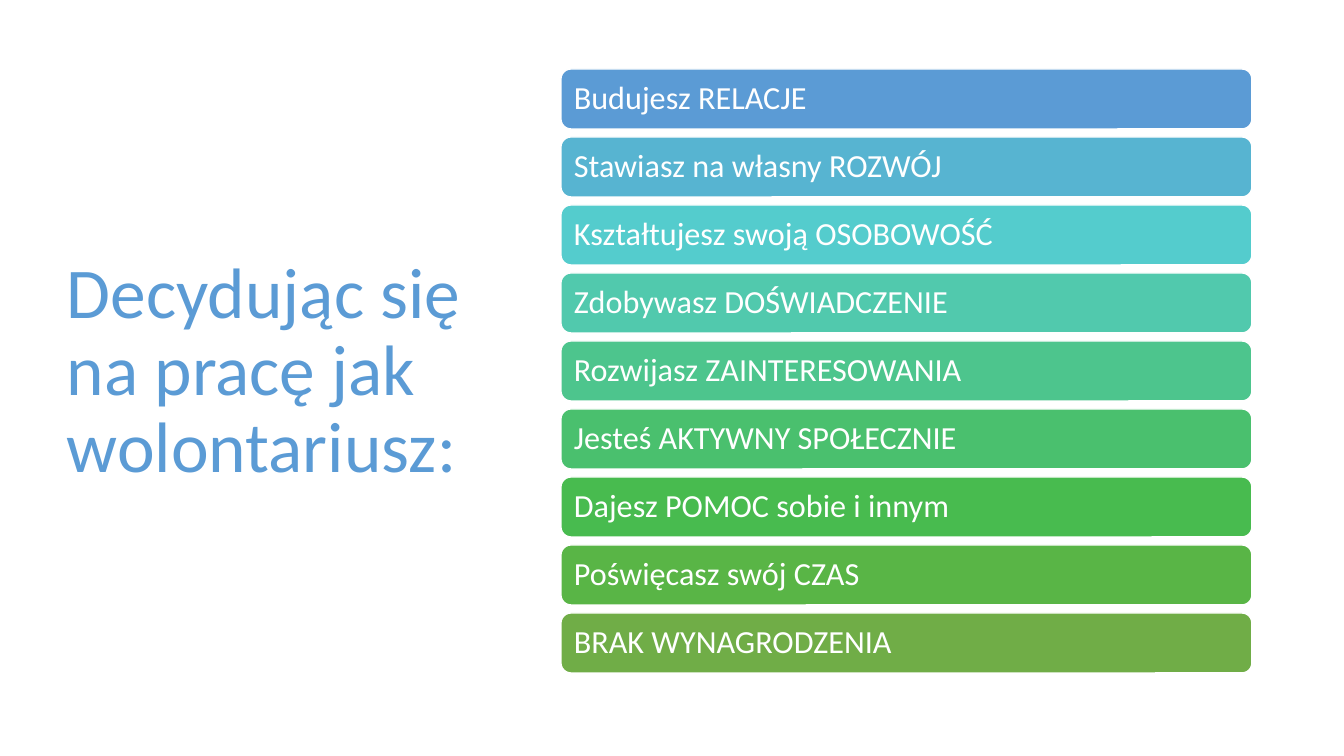
from dataclasses import dataclass

from pptx import Presentation
from pptx.dml.color import RGBColor
from pptx.enum.shapes import MSO_SHAPE
from pptx.enum.text import MSO_ANCHOR, PP_ALIGN
from pptx.util import Emu, Pt

ROUND_RECT = MSO_SHAPE.ROUNDED_RECTANGLE
MIDDLE = MSO_ANCHOR.MIDDLE
LEFT = PP_ALIGN.LEFT

PX_PER_INCH = 100.8
FONT = "Calibri"
COLORS = {
    "white": "FFFFFF",
    "blue": "5B9BD5",
    "sky": "57B4D1",
    "turquoise": "54CCCD",
    "teal": "51C9AD",
    "mint": "4DC58D",
    "emerald": "4AC06E",
    "green": "48BB4F",
    "leaf": "59B546",
    "olive": "70AD47",
}
INSET = 10
BAR_LEFT, BAR_TOP, BAR_WIDTH, BAR_HEIGHT, BAR_PITCH = 561, 69, 691, 60, 68


@dataclass(frozen=True)
class Benefit:
    text: str
    color: str


TITLE = "Decydując się na pracę jak wolontariusz:"
BENEFITS = [
    Benefit("Budujesz RELACJE", "blue"),
    Benefit("Stawiasz na własny ROZWÓJ", "sky"),
    Benefit("Kształtujesz swoją OSOBOWOŚĆ", "turquoise"),
    Benefit("Zdobywasz DOŚWIADCZENIE", "teal"),
    Benefit("Rozwijasz ZAINTERESOWANIA", "mint"),
    Benefit("Jesteś AKTYWNY SPOŁECZNIE", "emerald"),
    Benefit("Dajesz POMOC sobie i innym", "green"),
    Benefit("Poświęcasz swój CZAS", "leaf"),
    Benefit("BRAK WYNAGRODZENIA", "olive"),
]


def px(n: int) -> Emu:
    return Emu(round(n * 914400 / PX_PER_INCH))


def rgb(name: str) -> RGBColor:
    return RGBColor.from_string(COLORS[name])


def set_text(sp, text: str, size: int, color: str) -> None:
    tf = sp.text_frame
    tf.word_wrap = True
    tf.vertical_anchor = MIDDLE
    tf.margin_left = tf.margin_right = px(INSET)
    tf.margin_top = tf.margin_bottom = px(INSET // 2)
    p = tf.paragraphs[0]
    p.alignment = LEFT
    p.line_spacing = 0.9
    r = p.add_run()
    r.text = text
    r.font.name = FONT
    r.font.size = Pt(size)
    r.font.color.rgb = rgb(color)


def add_title(s) -> None:
    sp = s.shapes.add_textbox(px(57), px(69), px(419), px(607))
    set_text(sp, TITLE, 51, "blue")


def add_bar(s, benefit: Benefit, top: int) -> None:
    sp = s.shapes.add_shape(
        ROUND_RECT, px(BAR_LEFT), px(top), px(BAR_WIDTH), px(BAR_HEIGHT)
    )
    sp.shadow.inherit = False
    sp.fill.solid()
    sp.fill.fore_color.rgb = rgb(benefit.color)
    sp.line.color.rgb = rgb("white")
    sp.line.width = Pt(1)
    set_text(sp, benefit.text, 23, "white")


def main() -> None:
    prs = Presentation()
    prs.slide_width, prs.slide_height = px(1344), px(756)
    s = prs.slides.add_slide(prs.slide_layouts[6])
    add_title(s)
    for i, benefit in enumerate(BENEFITS):
        add_bar(s, benefit, BAR_TOP + i * BAR_PITCH)
    prs.save("out.pptx")


if __name__ == "__main__":
    main()
